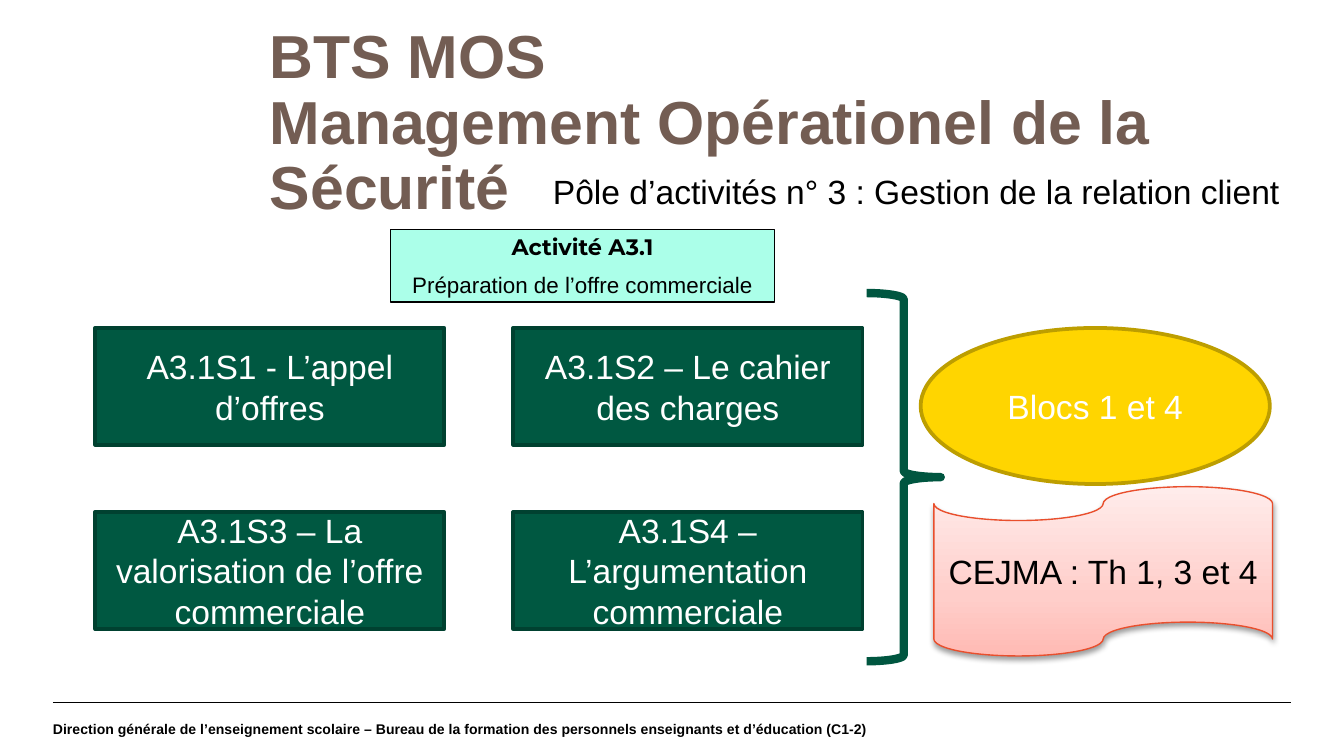
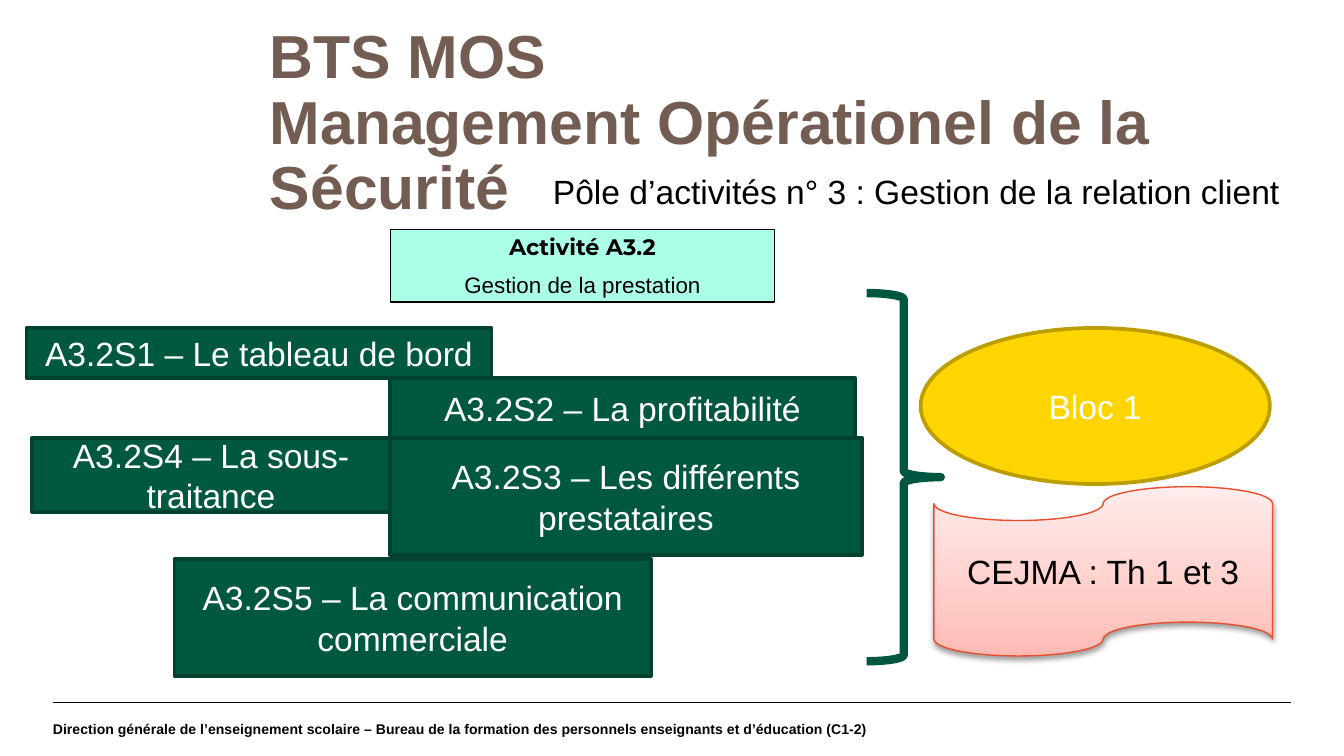
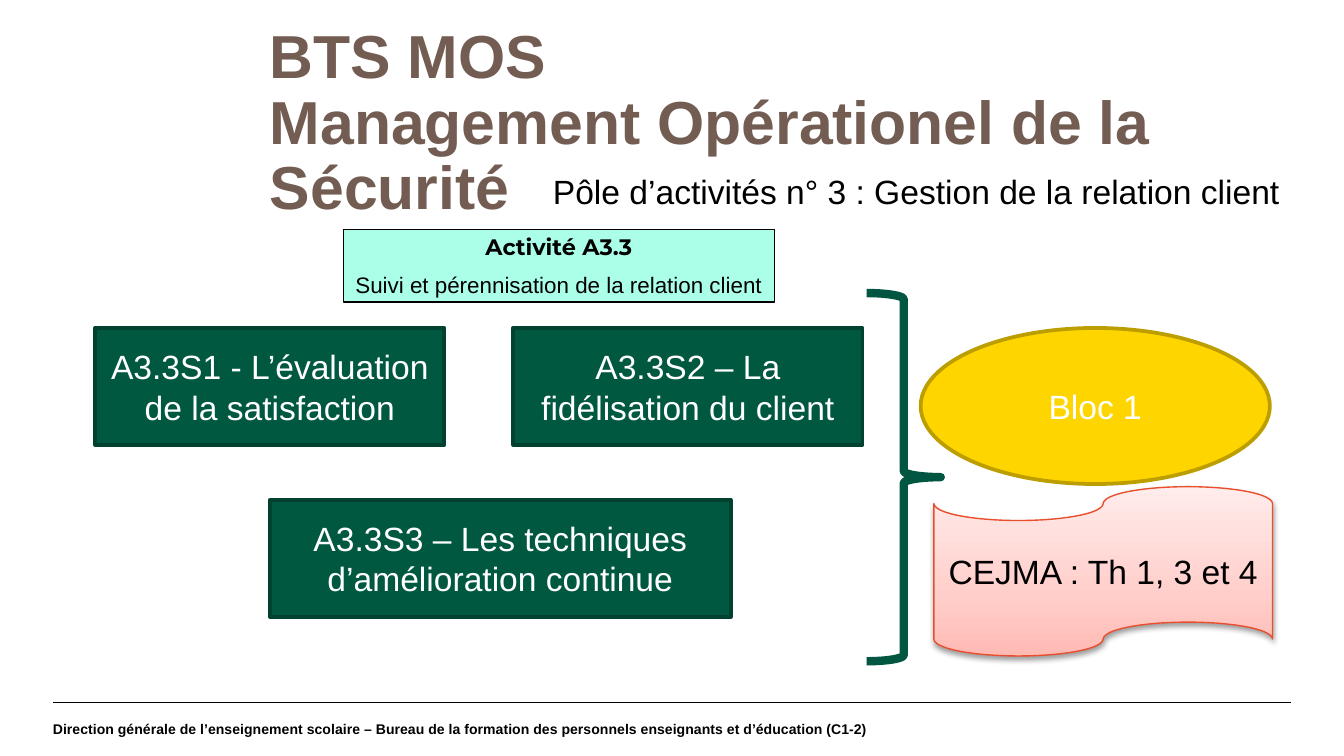
from dataclasses import dataclass
from typing import Any

from lxml.etree import SubElement
from pptx import Presentation
from pptx.dml.color import RGBColor
from pptx.enum.shapes import MSO_CONNECTOR, MSO_SHAPE
from pptx.enum.text import MSO_ANCHOR, MSO_AUTO_SIZE, PP_ALIGN
from pptx.oxml import parse_xml
from pptx.oxml.ns import nsdecls, qn
from pptx.util import Cm, Pt

INK = {
    "black": "000000", "white": "FFFFFF", "brown": "735D53",
    "green": "005841", "pine": "004130", "brace": "005640",
    "mint": "ABFFE9", "gold": "FFD500", "ochre": "BD9E00", "red": "E94F2D",
    "rose": "FFBAB4", "blush": "FFCECA", "pale": "FFECEB",
}
HEAD = ("BTS MOS", "Management Opérationel de la Sécurité")
POLE = "Pôle d’activités n° 3 : Gestion de la relation client"
FOOT = ("Direction générale de l’enseignement scolaire – "
        "Bureau de la formation des personnels enseignants et d’éducation (C1-2)")

FLUSH = {"margin_left": 0, "margin_right": 0, "margin_top": 0, "margin_bottom": 0}
WRAP = {"word_wrap": True}
MID = {"vertical_anchor": MSO_ANCHOR.MIDDLE}
TOP = {"vertical_anchor": MSO_ANCHOR.TOP, "auto_size": MSO_AUTO_SIZE.NONE}
CENTER = {"alignment": PP_ALIGN.CENTER}
LEFT = {"alignment": PP_ALIGN.LEFT}
BODY = {"name": "Arial", "size": Pt(18), "bold": False}
TITLE = BODY | {"size": Pt(32.5), "bold": True}
SMALL = BODY | {"size": Pt(7.5), "bold": True}
LABEL = BODY | {"size": Pt(12)}
CODE = LABEL | {"name": "Montserrat", "bold": True}


@dataclass
class Area:
    x: float
    y: float
    w: float
    h: float

    def size(self) -> list[Cm]:
        return [Cm(v) for v in (self.x, self.y, self.w, self.h)]


@dataclass
class Style:
    kind: MSO_SHAPE
    fill: str | None
    line: str
    width: float
    ink: str = "white"


@dataclass
class Box:
    text: str
    area: Area


@dataclass
class Page:
    code: str
    label: str
    wide: float
    boxes: list[Box]
    blocs: str
    theme: str


SKILL = Style(MSO_SHAPE.RECTANGLE, "green", "pine", 2)
TAG = Style(MSO_SHAPE.RECTANGLE, "mint", "black", 0.75)
OVAL = Style(MSO_SHAPE.OVAL, "gold", "ochre", 2)
TAPE = Style(MSO_SHAPE.FLOWCHART_PUNCHED_TAPE, None, "red", 0.75, "black")
BRACE = Style(MSO_SHAPE.RIGHT_BRACE, None, "brace", 4.5)


def cell(row: int, col: int) -> Area:
    return Area(1.8 + 7.9 * col, 6.2 + 3.48 * row, 6.6, 2.21)


PAGES = [
    Page("Activité A3.1", "Préparation de l’offre commerciale", 7.26, [
        Box("A3.1S1 - L’appel d’offres", cell(0, 0)),
        Box("A3.1S2 – Le cahier des charges", cell(0, 1)),
        Box("A3.1S3 – La valorisation de l’offre commerciale", cell(1, 0)),
        Box("A3.1S4 – L’argumentation commerciale", cell(1, 1)),
    ], "Blocs 1 et 4", "CEJMA : Th 1, 3 et 4"),
    Page("Activité A3.2", "Gestion de la prestation", 7.26, [
        Box("A3.2S1 – Le tableau de bord", Area(0.5, 6.2, 8.79, 0.94)),
        Box("A3.2S2 – La profitabilité", Area(7.37, 7.14, 8.79, 1.14)),
        Box("A3.2S3 – Les différents prestataires", Area(7.37, 8.28, 8.92, 2.21)),
        Box("A3.2S4 – La sous-traitance", Area(0.61, 8.28, 6.76, 1.4)),
        Box("A3.2S5 – La communication commerciale", Area(3.3, 10.57, 9, 2.21)),
    ], "Bloc 1", "CEJMA : Th 1 et 3"),
    Page("Activité A3.3", "Suivi et pérennisation de la relation client", 8.15, [
        Box("A3.3S1 - L’évaluation de la satisfaction", cell(0, 0)),
        Box("A3.3S2 – La fidélisation du client", cell(0, 1)),
        Box("A3.3S3 – Les techniques d’amélioration continue",
            Area(5.1, 9.45, 8.71, 2.21)),
    ], "Bloc 1", "CEJMA : Th 1, 3 et 4"),
]


def tint(name: str) -> RGBColor:
    return RGBColor.from_string(INK[name])


def apply(target: Any, values: dict[str, Any]) -> None:
    for key, value in values.items():
        setattr(target, key, value)


def add_line(frame: Any, text: str, font: dict, ink: str, para: dict) -> None:
    first = frame.paragraphs[0]
    item = frame.add_paragraph() if first.runs else first
    apply(item, para)
    run = item.add_run()
    run.text = text
    apply(run.font, font)
    run.font.color.rgb = tint(ink)


def add_box(slide: Any, style: Style, area: Area, text: str = "") -> Any:
    shape = slide.shapes.add_shape(style.kind, *area.size())
    shape.shadow.inherit = False
    if style.fill:
        shape.fill.solid()
        shape.fill.fore_color.rgb = tint(style.fill)
    else:
        shape.fill.background()
    shape.line.color.rgb = tint(style.line)
    shape.line.width = Pt(style.width)
    apply(shape.text_frame, WRAP | MID)
    if text:
        add_line(shape.text_frame, text, BODY, style.ink, CENTER)
    return shape


def add_note(slide: Any, area: Area, text: str, font: dict, form: dict) -> None:
    frame = slide.shapes.add_textbox(*area.size()).text_frame
    apply(frame, WRAP | form)
    add_line(frame, text, font, "black", LEFT)


def add_tag(slide: Any, page: Page) -> None:
    area = Area(14.64 - page.wide, 4.34, page.wide, 1.37)
    frame = add_box(slide, TAG, area).text_frame
    frame.word_wrap = False
    add_line(frame, page.code, CODE, "black", CENTER)
    add_line(frame, page.label, LABEL, "black", CENTER | {"space_before": Pt(6)})


def add_tape(slide: Any, text: str) -> None:
    props = add_box(slide, TAPE, Area(17.65, 9.2, 6.4, 3.2), text)._element.spPr
    stops = "".join(
        f'<a:gs pos="{spot * 1000}"><a:srgbClr val="{INK[name]}"/></a:gs>'
        for spot, name in ((0, "rose"), (35, "blush"), (100, "pale")))
    blend = parse_xml(
        f'<a:gradFill {nsdecls("a")} rotWithShape="1"><a:gsLst>{stops}</a:gsLst>'
        '<a:lin ang="16200000" scaled="0"/></a:gradFill>')
    props.replace(props.find(qn("a:noFill")), blend)
    props.find(qn("a:effectLst")).append(parse_xml(
        f'<a:outerShdw {nsdecls("a")} blurRad="40000" dist="20000" dir="5400000" '
        f'rotWithShape="0"><a:srgbClr val="{INK["black"]}"><a:alpha val="38000"/>'
        '</a:srgbClr></a:outerShdw>'))


def add_frame(slide: Any) -> None:
    rule = slide.shapes.add_connector(
        MSO_CONNECTOR.STRAIGHT, Cm(1), Cm(13.28), Cm(24.4), Cm(13.28))
    rule.line.color.rgb = tint("black")
    rule.line.width = Pt(0.8)
    SubElement(rule._element.spPr, qn("a:effectLst"))
    add_note(slide, Area(1, 13.28, 23.7, 1), FOOT, SMALL, FLUSH | MID)
    title = slide.shapes.title
    apply(title, dict(zip(("left", "top", "width", "height"),
                          Area(5.1, 0.5, 19, 3.63).size())))
    apply(title.text_frame, WRAP | FLUSH | TOP)
    for text in HEAD:
        add_line(title.text_frame, text, TITLE, "brown", LEFT | {"line_spacing": 0.9})
    add_note(slide, Area(10.2, 3.1, 15.2, 1.02), POLE, BODY, {})


def main() -> None:
    deck = Presentation()
    apply(deck, {"slide_width": Cm(25.4), "slide_height": Cm(14.29)})
    for page in PAGES:
        slide = deck.slides.add_slide(deck.slide_layouts[5])
        add_frame(slide)
        for box in page.boxes:
            add_box(slide, SKILL, box.area, box.text)
        add_tag(slide, page)
        add_box(slide, OVAL, Area(17.4, 6.2, 6.6, 2.95), page.blocs)
        add_tape(slide, page.theme)
        add_box(slide, BRACE, Area(16.38, 5.54, 1.4, 6.96))
    deck.save("out.pptx")


if __name__ == "__main__":
    main()
